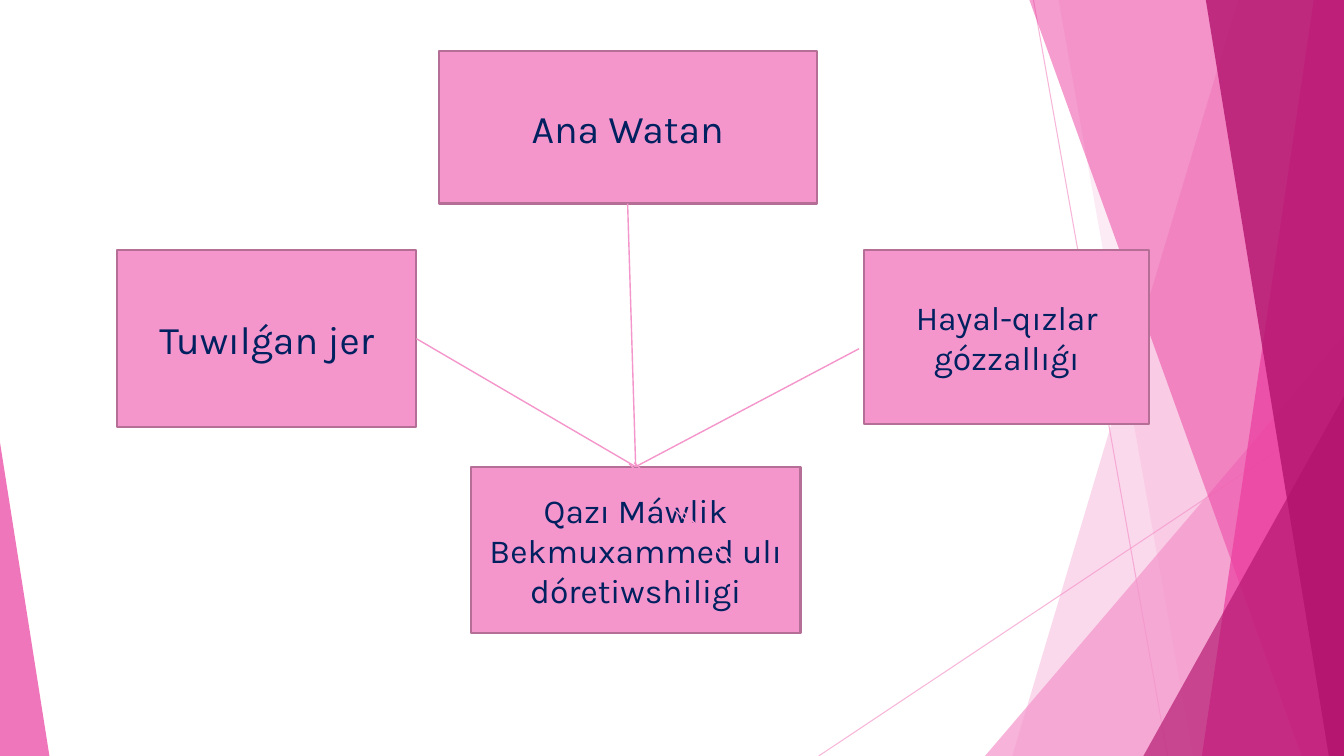
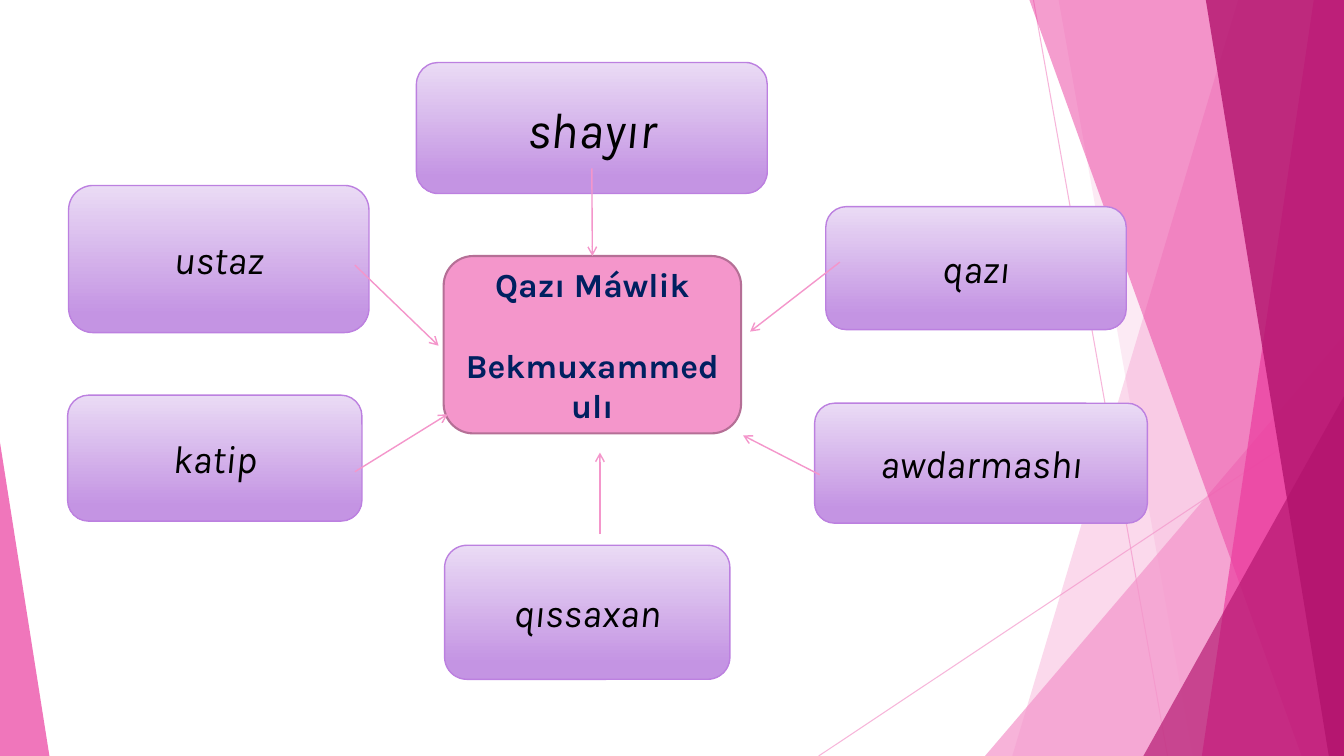
import pptx
import pptx.dml.color
import pptx.enum.shapes
import pptx.enum.text
import pptx.oxml
import pptx.oxml.ns
import pptx.util

Inches = pptx.util.Inches
SHAPE = pptx.enum.shapes.MSO_SHAPE

WIDTH, HEIGHT = 13.33, 7.5
FONT = "Karla"
PINK, ROSE, BERRY = "F496CB", "EB3D9F", "B2136D"
NAVY, BLACK, MAUVE = "002060", "000000", "B56F96"
LILAC_LINE = "BC80E0"
LILAC_STOPS = [(0, "EADBF5"), (0.88, "C494E3")]

BACKDROP_LINES = [((10.25, 0), (11.58, HEIGHT)), ((WIDTH, 4.03), (8.12, HEIGHT))]
BACKDROP_FACETS = [
    ("band", (12.28, 10.04), PINK, 36),
    ("band", (10.5, 11.83), PINK, 20),
    ("triangle", (9.77, 3.33, 3.56, 4.17, 1), PINK, 72),
    ("band", (10.21, 12.91), ROSE, 50),
    ("band", (13.03, 11.92), ROSE, 70),
    ("band", (11.96, 13.18), BERRY, 80),
    ("triangle", (11.34, 3.93, 1.99, 3.57, 1), BERRY, 66),
    ("triangle", (0, 4.39, 0.49, 3.11, 0), ROSE, 70),
]

PINK_BOX = dict(kind=SHAPE.RECTANGLE, fill=PINK, line=MAUVE, line_width=1.5, color=NAVY)
CENTRE_BOX = dict(PINK_BOX, kind=SHAPE.FLOWCHART_ALTERNATE_PROCESS, bold=True, gap=28.5)
LILAC_BOX = dict(kind=SHAPE.ROUNDED_RECTANGLE, fill=LILAC_STOPS, line=LILAC_LINE,
                 line_width=1, color=BLACK, italic=True)
TOP, LEFT, BOTTOM, RIGHT = range(4)

DIAGRAMS = [
    {
        "boxes": {
            "homeland": (["Ana Watan"], (4.35, 0.51, 3.75, 1.51), 28, PINK_BOX),
            "birthplace": (["Tuwılǵan jer"], (1.16, 2.48, 2.97, 1.76), 28, PINK_BOX),
            "beauty": (["Hayal-qızlar", "gózzallıǵı"], (8.57, 2.48, 2.83, 1.73), 24, PINK_BOX),
            "works": (["Qazı Máwlik", "Bekmuxammed ulı", "dóretiwshiligi"],
                      (4.67, 4.63, 3.27, 1.65), 24, PINK_BOX),
        },
        "arrowhead": False,
        "links": [
            ((6.24, 4.6), (7.24, 5.6)),
            ((6.29, 4.59), (7.29, 5.59)),
            ((8.52, 3.46), ("works", TOP)),
            (("birthplace", RIGHT), ("works", TOP)),
            (("homeland", BOTTOM), ("works", TOP)),
        ],
    },
    {
        "boxes": {
            "person": (["Qazı Máwlik", "Bekmuxammed ulı"], (4.4, 2.54, 2.95, 1.76), 24, CENTRE_BOX),
            "teacher": (["ustaz"], (0.68, 1.84, 2.98, 1.46), 28, LILAC_BOX),
            "judge": (["qazı"], (8.19, 2.05, 2.98, 1.22), 28, LILAC_BOX),
            "translator": (["awdarmashı"], (8.08, 4, 3.3, 1.19), 28, LILAC_BOX),
            "narrator": (["qıssaxan"], (4.41, 5.41, 2.83, 1.33), 28, LILAC_BOX),
            "secretary": (["katip"], (0.67, 3.92, 2.92, 1.25), 28, LILAC_BOX),
            "poet": (["shayır"], (4.13, 0.62, 3.48, 1.3), 36, LILAC_BOX),
        },
        "arrowhead": True,
        "links": [
            ((5.87, 1.67), ("person", TOP)),
            ((8.33, 2.6), (7.44, 3.29)),
            ((8.13, 4.71), (7.37, 4.32)),
            ((5.95, 5.3), (5.95, 4.49)),
            ((3.52, 2.63), (4.35, 3.43)),
            ((3.52, 4.68), (4.44, 4.11)),
        ],
    },
]


def rgb(value):
    return pptx.dml.color.RGBColor.from_string(value)


def add_child(parent, tag, **attributes):
    child = pptx.oxml.parse_xml(f"<{tag} {pptx.oxml.ns.nsdecls('a')}/>")
    for name, value in attributes.items():
        child.set(name, value)
    parent.append(child)


def set_opacity(shape, percent):
    for color in shape.element.spPr.iter(pptx.oxml.ns.qn("a:srgbClr")):
        add_child(color, "a:alpha", val=str(percent * 1000))


def add_line(shapes, start, end, width, arrowhead=False):
    points = [Inches(value) for value in (*start, *end)]
    connector = shapes.add_connector(pptx.enum.shapes.MSO_CONNECTOR.STRAIGHT, *points)
    connector.line.color.rgb = rgb(PINK)
    connector.line.width = pptx.util.Pt(width)
    properties = connector.element.spPr
    if arrowhead:
        add_child(properties.find(pptx.oxml.ns.qn("a:ln")), "a:tailEnd", type="arrow")
    add_child(properties, "a:effectLst")
    return connector


def add_facet(shapes, kind, geometry, color, opacity):
    if kind == "band":
        top_x, bottom_x = geometry
        corners = [(top_x, 0), (WIDTH, 0), (WIDTH, HEIGHT), (bottom_x, HEIGHT)]
        points = [(Inches(x), Inches(y)) for x, y in corners]
        builder = shapes.build_freeform(*points[0], scale=1.0)
        builder.add_line_segments(points[1:], close=True)
        shape = builder.convert_to_shape()
    else:
        *box, apex = geometry
        shape = shapes.add_shape(SHAPE.ISOSCELES_TRIANGLE, *map(Inches, box))
        shape.adjustments[0] = apex
    shape.shadow.inherit = False
    shape.fill.solid()
    shape.fill.fore_color.rgb = rgb(color)
    shape.line.fill.background()
    set_opacity(shape, opacity)


def move_backdrop_to_layout(slide, layout):
    for placeholder in list(layout.placeholders):
        layout.shapes.element.remove(placeholder.element)
    group = slide.shapes.add_group_shape()
    for start, end in BACKDROP_LINES:
        set_opacity(add_line(group.shapes, start, end, 0.75), 70)
    for facet in BACKDROP_FACETS:
        add_facet(group.shapes, *facet)
    layout.shapes.element.append(group.element)


def fill_shape(shape, fill):
    if isinstance(fill, str):
        shape.fill.solid()
        shape.fill.fore_color.rgb = rgb(fill)
        return
    shape.fill.gradient()
    shape.fill.gradient_angle = 270
    for stop, (position, color) in zip(shape.fill.gradient_stops, fill):
        stop.position = position
        stop.color.rgb = rgb(color)


def add_box(slide, lines, box, size, style):
    shape = slide.shapes.add_shape(style["kind"], *map(Inches, box))
    shape.shadow.inherit = False
    fill_shape(shape, style["fill"])
    shape.line.color.rgb = rgb(style["line"])
    shape.line.width = pptx.util.Pt(style["line_width"])
    frame = shape.text_frame
    frame.word_wrap = True
    frame.vertical_anchor = pptx.enum.text.MSO_ANCHOR.MIDDLE
    frame.text = "\n".join(lines)
    for index, paragraph in enumerate(frame.paragraphs):
        paragraph.alignment = pptx.enum.text.PP_ALIGN.CENTER
        if index:
            paragraph.space_before = pptx.util.Pt(style.get("gap", 0))
        for run in paragraph.runs:
            run.font.name = FONT
            run.font.size = pptx.util.Pt(size)
            run.font.color.rgb = rgb(style["color"])
            run.font.bold = style.get("bold", False)
            run.font.italic = style.get("italic", False)
    return shape


def add_link(slide, boxes, start, end, arrowhead):
    points = [(0, 0) if point[0] in boxes else point for point in (start, end)]
    connector = add_line(slide.shapes, *points, 1, arrowhead)
    for point, connect in ((start, connector.begin_connect), (end, connector.end_connect)):
        if point[0] in boxes:
            connect(boxes[point[0]], point[1])


def main():
    presentation = pptx.Presentation()
    presentation.slide_width = Inches(WIDTH)
    presentation.slide_height = Inches(HEIGHT)
    layout = presentation.slide_layouts[6]
    slides = [presentation.slides.add_slide(layout) for diagram in DIAGRAMS]
    move_backdrop_to_layout(slides[0], layout)
    for slide, diagram in zip(slides, DIAGRAMS):
        boxes = {name: add_box(slide, *box) for name, box in diagram["boxes"].items()}
        for start, end in diagram["links"]:
            add_link(slide, boxes, start, end, diagram["arrowhead"])
    presentation.save("out.pptx")


if __name__ == "__main__":
    main()
